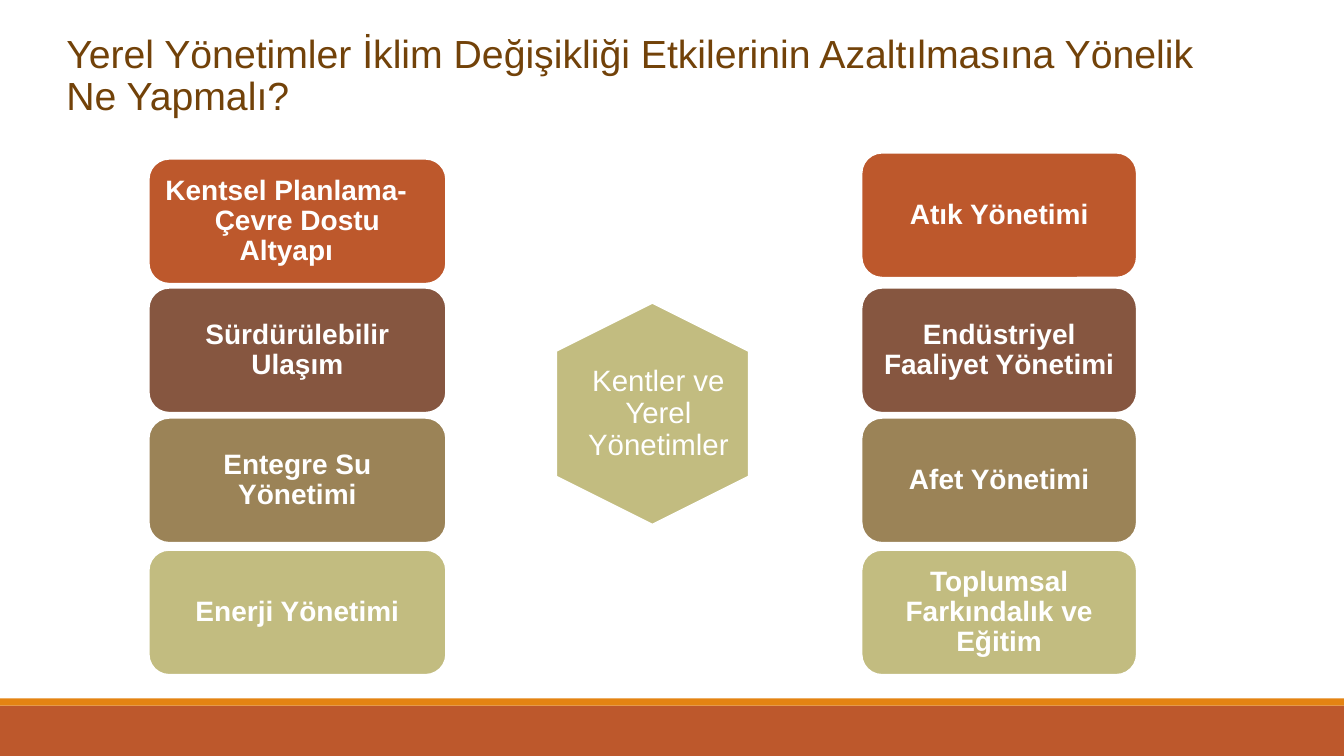
import pptx
import pptx.util
from pptx.dml.color import RGBColor
from pptx.enum.shapes import MSO_SHAPE
from pptx.enum.text import MSO_ANCHOR, PP_ALIGN

WIDTH, HEIGHT = 13.33, 7.5
FONT = "Arial"
COLORS = {
    "rust": "BD582C", "orange": "E48312", "brown": "865640", "tan": "9B8357",
    "khaki": "C2BC80", "title": "724209", "white": "FFFFFF",
}
CARD_COLORS = ["rust", "brown", "tan", "khaki"]
LOWER_ROWS = [2.85, 4.14, 5.45]
CARD_HEIGHT = 1.25
LEFT_CARDS = ["Kentsel Planlama-\nÇevre Dostu Altyapı", "Sürdürülebilir Ulaşım",
              "Entegre Su Yönetimi", "Enerji Yönetimi"]
RIGHT_CARDS = ["Atık Yönetimi", "Endüstriyel Faaliyet Yönetimi",
               "Afet Yönetimi", "Toplumsal Farkındalık ve Eğitim"]


def color(name):
    return RGBColor.from_string(COLORS[name])


def inches(*lengths):
    return [pptx.util.Inches(length) for length in lengths]


def add_filled_shape(slide, kind, box, fill, line_width=0):
    """Add a plain shape, with a white outline if line_width is given."""
    shape = slide.shapes.add_shape(kind, *inches(*box))
    shape.shadow.inherit = False
    shape.fill.solid()
    shape.fill.fore_color.rgb = color(fill)
    if line_width:
        shape.line.color.rgb = color("white")
        shape.line.width = pptx.util.Pt(line_width)
    else:
        shape.line.fill.background()
    return shape


def write_text(shape, text, size, ink="white", bold=False,
               align=PP_ALIGN.CENTER, margins=(0.1, 0.05)):
    frame = shape.text_frame
    frame.word_wrap = True
    frame.vertical_anchor = MSO_ANCHOR.MIDDLE
    frame.margin_left = frame.margin_right = pptx.util.Inches(margins[0])
    frame.margin_top = frame.margin_bottom = pptx.util.Inches(margins[1])
    frame.text = text
    for para in frame.paragraphs:
        para.alignment = align
        para.line_spacing = 0.9
        for span in para.runs:
            span.font.name = FONT
            span.font.size = pptx.util.Pt(size)
            span.font.bold = bold
            span.font.color.rgb = color(ink)


def add_footer(slide, top):
    stripe = 0.07
    add_filled_shape(slide, MSO_SHAPE.RECTANGLE, (0, top + stripe, WIDTH, HEIGHT - top - stripe), "rust")
    add_filled_shape(slide, MSO_SHAPE.RECTANGLE, (0, top, WIDTH, stripe), "orange")


def add_title(slide, box):
    title = slide.shapes.add_textbox(*inches(*box))
    write_text(title, "Yerel Yönetimler İklim Değişikliği Etkilerinin Azaltılmasına Yönelik\n"
               "Ne Yapmalı?", 28, "title", align=PP_ALIGN.LEFT)


def add_card_column(slide, left, first_top, width, labels):
    """Stack the cards of one side and return them from top to bottom."""
    cards = []
    for top, label, fill in zip([first_top] + LOWER_ROWS, labels, CARD_COLORS):
        card = add_filled_shape(slide, MSO_SHAPE.ROUNDED_RECTANGLE,
                                (left, top, width, CARD_HEIGHT), fill, 2)
        write_text(card, label, 20, bold=True, margins=(0.08, 0.04))
        cards.append(card)
    return cards


def stagger_lines(card):
    """Shift the first line to the left and the second to the right."""
    first, second = card.text_frame.paragraphs
    shift = str(pptx.util.Inches(0.22))
    first._p.get_or_add_pPr().set("marR", shift)
    second._p.get_or_add_pPr().set("indent", shift)


def add_hub(slide, box):
    left, top, width, height = box
    hexagon = add_filled_shape(slide, MSO_SHAPE.HEXAGON, box, "khaki", 1.25)
    hexagon.rotation = 90
    hexagon.adjustments[0] = 0.25
    label = slide.shapes.add_textbox(
        *inches(left + 0.2 * width, top + 0.2, 0.655 * width, height - 0.4))
    write_text(label, "Kentler ve Yerel Yönetimler", 21, margins=(0, 0))


def main():
    deck = pptx.Presentation()
    deck.slide_width, deck.slide_height = inches(WIDTH, HEIGHT)
    slide = deck.slides.add_slide(deck.slide_layouts[6])
    add_footer(slide, 6.93)
    add_title(slide, (0.56, 0.31, 11.81, 0.9))
    left_cards = add_card_column(slide, 1.47, 1.57, 2.96, LEFT_CARDS)
    stagger_lines(left_cards[0])
    add_hub(slide, (5.37, 3.15, 2.2, 1.91))
    add_card_column(slide, 8.54, 1.51, 2.74, RIGHT_CARDS)
    deck.save("out.pptx")


if __name__ == "__main__":
    main()
